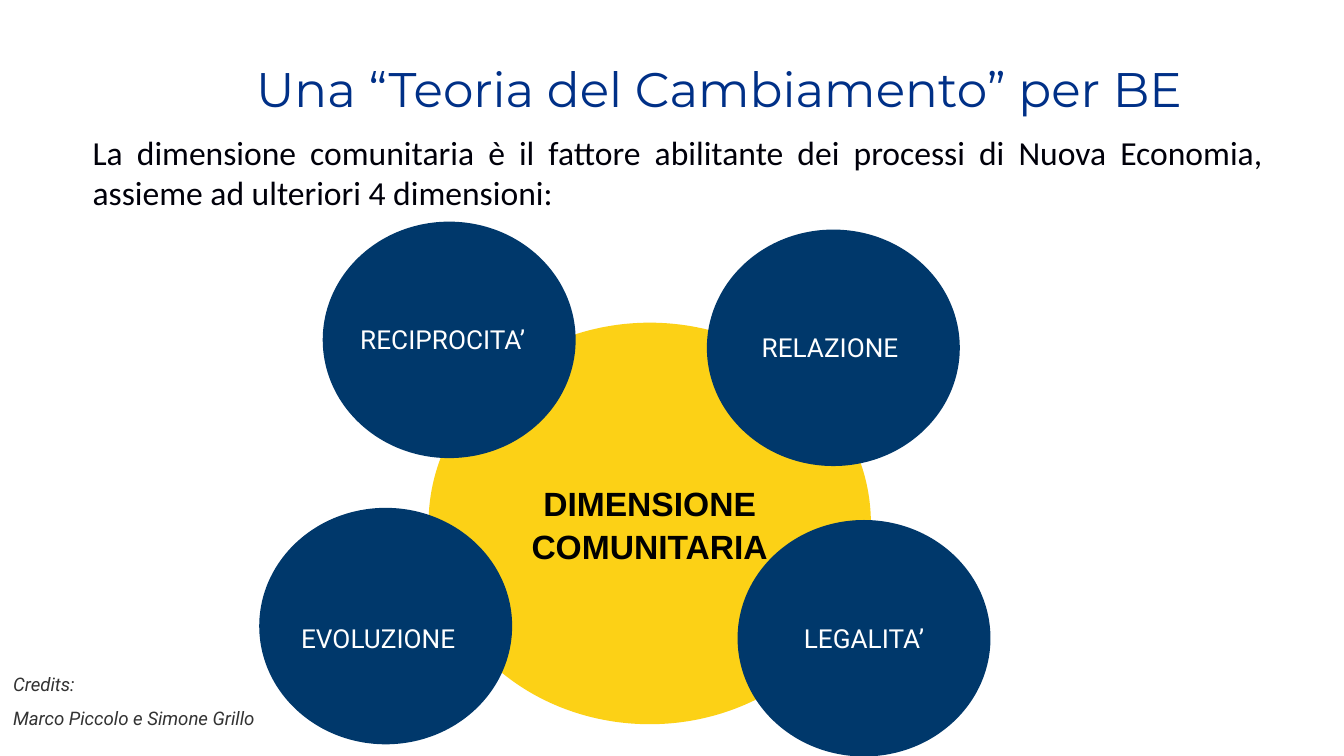
from pptx import Presentation
from pptx.dml.color import RGBColor
from pptx.enum.shapes import MSO_SHAPE
from pptx.enum.text import MSO_ANCHOR, PP_ALIGN
from pptx.util import Cm, Pt

OVAL, RECTANGLE = MSO_SHAPE.OVAL, MSO_SHAPE.RECTANGLE
TOP, MIDDLE = MSO_ANCHOR.TOP, MSO_ANCHOR.MIDDLE
LEFT, CENTER, JUSTIFY = PP_ALIGN.LEFT, PP_ALIGN.CENTER, PP_ALIGN.JUSTIFY

# Content
TITLE = "Una “Teoria del Cambiamento” per BE"
INTRO = ("La dimensione comunitaria è il fattore abilitante dei processi di "
         "Nuova Economia, assieme ad ulteriori 4 dimensioni:")
CORE = "DIMENSIONE COMUNITARIA"
# Text, disc left and top, label left offset, top offset and width (cm)
DIMENSIONS = [
    ("LEGALITA’", 13.94, 9.83, 0.74, 1.5, 3.3),
    ("RELAZIONE ", 13.36, 4.34, 0.74, 1.5, 3.3),
    ("RECIPROCITA’", 6.1, 4.19, 0.2, 1.5, 4.14),
    ("EVOLUZIONE", 4.9, 9.6, 0.46, 1.73, 3.58),
]
CREDITS = ["Credits:", "Marco Piccolo e Simone Grillo"]

# Theme: fills, then (font, size, colour, bold, italic) for each text role
THEME = {
    "core_fill": "FCD116",
    "disc_fill": "00386B",
    "title": ("Montserrat", 26, "003087", False, False),
    "intro": ("Calibri", 18, "00000A", False, False),
    "core": ("Arial", 18, "000000", True, False),
    "label": ("Roboto", 14, "FFFFFF", False, False),
    "credits": ("Roboto", 10, "333333", False, True),
}
DISC_WIDTH, DISC_HEIGHT = 4.78, 4.47
LABEL_HEIGHT = 1.45


def write(box, lines, role, align, anchor=TOP, inset=0.25, gap=0, spacing=None):
    frame = box.text_frame
    frame.word_wrap = True
    frame.vertical_anchor = anchor
    frame.margin_left = frame.margin_right = Cm(inset)
    frame.margin_top = frame.margin_bottom = Cm(inset)
    name, size, colour, bold, italic = THEME[role]
    for index, line in enumerate(lines):
        para = frame.add_paragraph() if index else frame.paragraphs[0]
        para.alignment = align
        if index and gap:
            para.space_before = Pt(gap)
        if spacing:
            para.line_spacing = spacing
        span = para.add_run()
        span.text = line
        span.font.name = name
        span.font.size = Pt(size)
        span.font.bold = bold
        span.font.italic = italic
        span.font.color.rgb = RGBColor.from_string(colour)


def add_text(page, place, *content, **options):
    write(page.shapes.add_textbox(*map(Cm, place)), *content, **options)


def add_filled(shapes, kind, place, fill):
    shape = shapes.add_shape(kind, *map(Cm, place))
    shape.shadow.inherit = False
    shape.fill.solid()
    shape.fill.fore_color.rgb = RGBColor.from_string(THEME[fill])
    shape.line.fill.background()
    return shape


def main():
    deck = Presentation()
    deck.slide_width, deck.slide_height = Cm(25.4), Cm(14.29)
    page = deck.slides.add_slide(deck.slide_layouts[6])

    # Title and introduction
    add_text(page, (2.64, 1.02, 21.92, 1.32), [TITLE], "title", CENTER, inset=0.1)
    add_text(page, (1.5, 2.24, 22.63, 8.99), [INTRO], "intro", JUSTIFY)

    # Central disc
    core = add_filled(page.shapes, OVAL, (8.1, 6.1, 8.36, 7.59), "core_fill")
    write(core, [CORE], "core", CENTER, MIDDLE, spacing=1.07)

    # Surrounding discs, each grouped with its label
    for text, left, top, label_dx, label_dy, label_width in DIMENSIONS:
        group = page.shapes.add_group_shape()
        add_filled(group.shapes, OVAL, (left, top, DISC_WIDTH, DISC_HEIGHT), "disc_fill")
        place = (left + label_dx, top + label_dy, label_width, LABEL_HEIGHT)
        label = add_filled(group.shapes, RECTANGLE, place, "disc_fill")
        write(label, [text], "label", CENTER, MIDDLE)

    # Credits
    add_text(page, (0, 12.47, 6.86, 1.82), CREDITS, "credits", LEFT, gap=6)

    deck.save("out.pptx")


if __name__ == "__main__":
    main()
